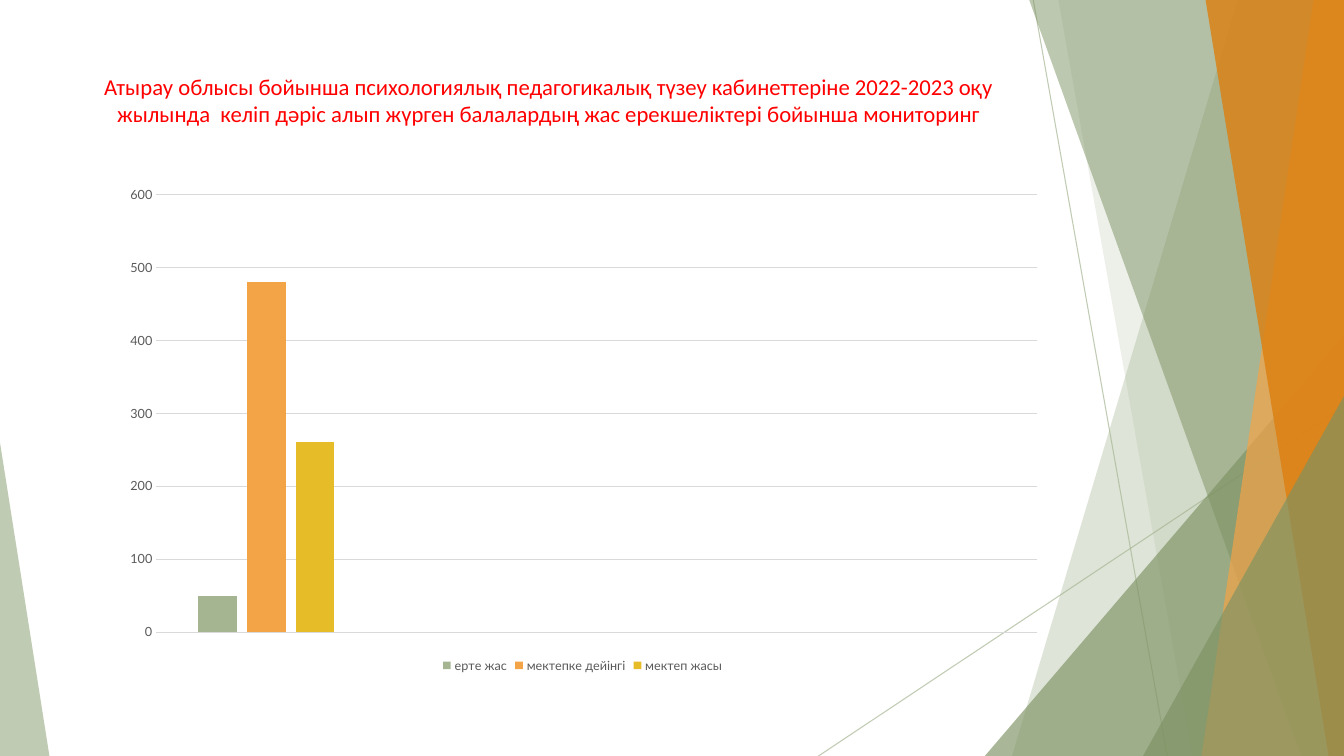
from lxml.etree import SubElement
from pptx import Presentation
from pptx.chart.data import CategoryChartData
from pptx.dml.color import RGBColor
from pptx.enum.chart import XL_CHART_TYPE, XL_LEGEND_POSITION, XL_TICK_MARK
from pptx.enum.shapes import MSO_CONNECTOR, MSO_SHAPE
from pptx.enum.text import MSO_ANCHOR, PP_ALIGN
from pptx.oxml import parse_xml
from pptx.oxml.ns import nsdecls, qn
from pptx.util import Inches, Pt

SAGE, MOSS = "A5B592", "7D9263"
ORANGE, DARK_ORANGE, GOLD = "F3A447", "DD7E0E", "E7BC29"
RED, GREY, LIGHT_GREY = "FF0000", "595959", "D9D9D9"


def color(value):
    return RGBColor.from_string(value)


class SlideBuilder:
    title_font = "Calibri"
    chart_font = "Lato"

    def __init__(self, presentation):
        self.width = presentation.slide_width
        self.height = presentation.slide_height
        self.slide = presentation.slides.add_slide(presentation.slide_layouts[6])
        self.shapes = self.slide.shapes

    def across(self, percent):
        return round(self.width * percent / 100)

    def down(self, percent):
        return round(self.height * percent / 100)

    def box(self, left, top, width, height):
        return (self.across(left), self.down(top),
                self.across(width), self.down(height))

    def paint(self, fill, value, opacity):
        fill.solid()
        fill.fore_color.rgb = color(value)
        choice = fill._xPr.find(qn("a:solidFill"))[0]
        SubElement(choice, qn("a:alpha"), val=str(opacity * 1000))

    def finish(self, shape, value, opacity):
        shape.shadow.inherit = False
        shape.line.fill.background()
        self.paint(shape.fill, value, opacity)

    def line(self, start, end):
        connector = self.shapes.add_connector(
            MSO_CONNECTOR.STRAIGHT,
            self.across(start[0]), self.down(start[1]),
            self.across(end[0]), self.down(end[1]))
        connector.line.width = Pt(0.75)
        self.paint(connector.line.fill, SAGE, 70)
        SubElement(connector._element.spPr, qn("a:effectLst"))

    def ribbon(self, top_left, bottom_left, value, opacity):
        builder = self.shapes.build_freeform(self.across(top_left), 0)
        corners = [(100, 0), (100, 100), (bottom_left, 100)]
        builder.add_line_segments(
            [(self.across(x), self.down(y)) for x, y in corners], close=True)
        self.finish(builder.convert_to_shape(), value, opacity)

    def corner(self, left, top, width, apex, value, opacity):
        shape = self.shapes.add_shape(
            MSO_SHAPE.ISOSCELES_TRIANGLE, *self.box(left, top, width, 100 - top))
        shape.adjustments[0] = apex
        self.finish(shape, value, opacity)

    def title(self, text, *area):
        frame = self.shapes.add_textbox(*self.box(*area)).text_frame
        frame.word_wrap = True
        frame.vertical_anchor = MSO_ANCHOR.TOP
        paragraph = frame.paragraphs[0]
        paragraph.alignment = PP_ALIGN.CENTER
        run = paragraph.add_run()
        run.text = text
        run.font.name = self.title_font
        run.font.size = Pt(16.2)
        run.font.color.rgb = color(RED)

    def style_font(self, font):
        font.name = self.chart_font
        font.size = Pt(9)
        font.color.rgb = color(GREY)

    def columns(self, categories, series, *area):
        data = CategoryChartData()
        data.categories = categories
        for name, values, _ in series:
            data.add_series(name, values)
        chart = self.shapes.add_chart(
            XL_CHART_TYPE.COLUMN_CLUSTERED, *self.box(*area), data).chart
        chart.has_title = False
        self.style_font(chart.font)
        plot = chart.plots[0]
        plot.vary_by_categories = False
        plot.gap_width = 219
        plot.overlap = -27
        for column, (_, _, value) in zip(plot.series, series):
            column.format.fill.solid()
            column.format.fill.fore_color.rgb = color(value)
        chart.category_axis.visible = False
        axis = chart.value_axis
        axis.minimum_scale, axis.maximum_scale, axis.major_unit = 0, 600, 100
        axis.major_tick_mark = XL_TICK_MARK.NONE
        axis.format.line.fill.background()
        grid_line = axis.major_gridlines.format.line
        grid_line.color.rgb = color(LIGHT_GREY)
        grid_line.width = Pt(0.75)
        self.style_font(axis.tick_labels.font)
        chart.has_legend = True
        chart.legend.position = XL_LEGEND_POSITION.BOTTOM
        chart.legend.include_in_layout = False
        self.style_font(chart.legend.font)
        self.place_plot(chart, x=0.05, y=0.04, w=0.93, h=0.87)

    def place_plot(self, chart, **shares):
        plot_area = chart._chartSpace.chart.plotArea
        for layout in plot_area.findall(qn("c:layout")):
            plot_area.remove(layout)
        layout = parse_xml(f"<c:layout {nsdecls('c')}><c:manualLayout/></c:layout>")
        settings = {"layoutTarget": "inner", "xMode": "edge", "yMode": "edge", **shares}
        for name, value in settings.items():
            SubElement(layout[0], qn(f"c:{name}"), val=str(value))
        plot_area.insert(0, layout)


def main():
    presentation = Presentation()
    presentation.slide_width = Inches(13.33)
    presentation.slide_height = Inches(7.5)
    builder = SlideBuilder(presentation)

    builder.line((76.88, 0), (86.85, 100))
    builder.line((100, 53.73), (60.9, 100))
    builder.ribbon(92.1, 75.3, SAGE, 36)
    builder.ribbon(78.75, 88.73, SAGE, 20)
    builder.corner(73.28, 44.4, 26.72, 1, MOSS, 66)
    builder.ribbon(76.58, 96.83, MOSS, 50)
    builder.ribbon(97.73, 89.4, ORANGE, 70)
    builder.ribbon(89.7, 98.85, DARK_ORANGE, 80)
    builder.corner(85.05, 52.4, 14.95, 1, MOSS, 66)
    builder.corner(0, 58.53, 3.68, 0, SAGE, 70)

    builder.title(
        "Атырау облысы бойынша психологиялық педагогикалық түзеу кабинеттеріне "
        "2022-2023 оқу жылында  келіп дәріс алып жүрген балалардың жас "
        "ерекшеліктері бойынша мониторинг",
        5.55, 8.93, 70.5, 9.87)
    builder.columns(
        ["1", "", "", ""],
        [("ерте жас", [50, None, None, None], SAGE),
         ("мектепке дейінгі", [480, None, None, None], ORANGE),
         ("мектеп жасы", [260, None, None, None], GOLD)],
        8.1, 23.07, 70.5, 66.53)

    presentation.save("out.pptx")


if __name__ == "__main__":
    main()
